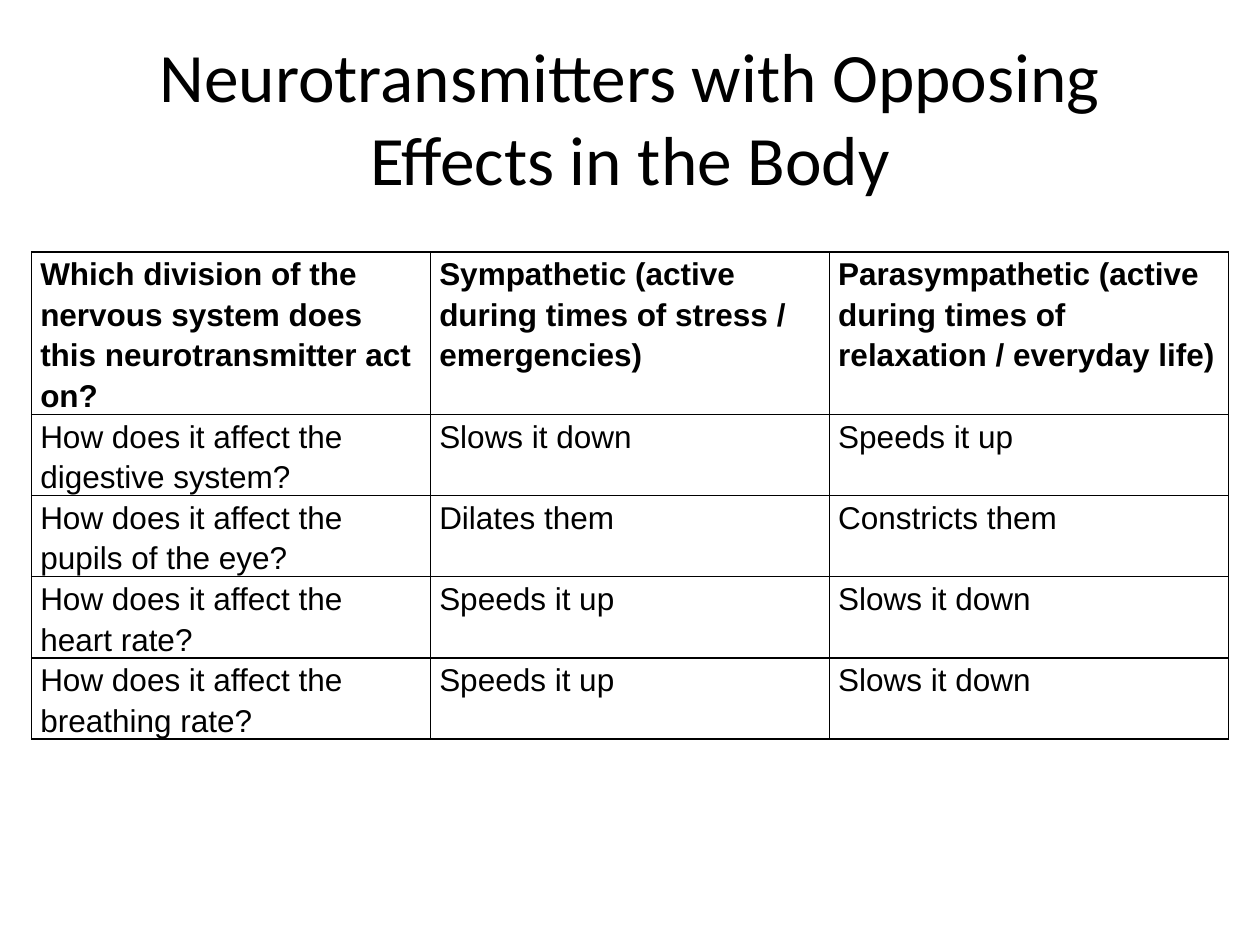
"""Build a slide comparing sympathetic and parasympathetic neurotransmitters."""
from lxml.etree import SubElement
from pptx import Presentation
from pptx.dml.color import RGBColor
from pptx.enum.text import MSO_ANCHOR, PP_ALIGN
from pptx.oxml.ns import qn
from pptx.util import Inches, Pt

BLACK = RGBColor(0, 0, 0)
ROWS = [
    ("Which division of the nervous system does this neurotransmitter act on?",
     "Sympathetic (active during times of stress / emergencies)",
     "Parasympathetic (active during times of relaxation / everyday life)"),
    ("How does it affect the digestive system?", "Slows it down", "Speeds it up"),
    ("How does it affect the pupils of the eye?", "Dilates them", "Constricts them"),
    ("How does it affect the heart rate?", "Speeds it up", "Slows it down"),
    ("How does it affect the breathing rate?", "Speeds it up", "Slows it down"),
]


def style(para, font, size, bold=False):
    for run in para.runs:
        run.font.name = font
        run.font.size = Pt(size)
        run.font.bold = bold
        run.font.color.rgb = BLACK


def border(cell):
    props = cell._tc.get_or_add_tcPr()
    for side in ("lnL", "lnR", "lnT", "lnB"):
        line = SubElement(props, qn(f"a:{side}"), w=str(Pt(1)))
        fill = SubElement(line, qn("a:solidFill"))
        SubElement(fill, qn("a:srgbClr"), val=str(BLACK))


deck = Presentation()
deck.slide_width, deck.slide_height = Inches(10), Inches(7.5)
slide = deck.slides.add_slide(deck.slide_layouts[5])

title = slide.shapes.title
title.left, title.top = Inches(0.5), Inches(0.3)
title.width, title.height = Inches(9), Inches(1.25)
title.text_frame.text = "Neurotransmitters with Opposing Effects in the Body"
title.text_frame.word_wrap = True
title.text_frame.vertical_anchor = MSO_ANCHOR.MIDDLE
head = title.text_frame.paragraphs[0]
head.alignment = PP_ALIGN.CENTER
style(head, "Calibri", 39.6)

frame = slide.shapes.add_table(len(ROWS), len(ROWS[0]), Inches(0.25), Inches(2),
                               Inches(9.5), Inches(3.85))
table = frame.table
table.first_row = table.horz_banding = False
for r, texts in enumerate(ROWS):
    table.rows[r].height = Inches(1.29 if r == 0 else 0.64)
    for c, text in enumerate(texts):
        cell = table.cell(r, c)
        cell.text_frame.text = text
        cell.margin_left = cell.margin_right = Inches(0.07)
        cell.margin_top = cell.margin_bottom = 0
        para = cell.text_frame.paragraphs[0]
        para.line_spacing = 1.15
        style(para, "Arial", 18, bold=r == 0)
        border(cell)
        cell.fill.background()

deck.save("out.pptx")
